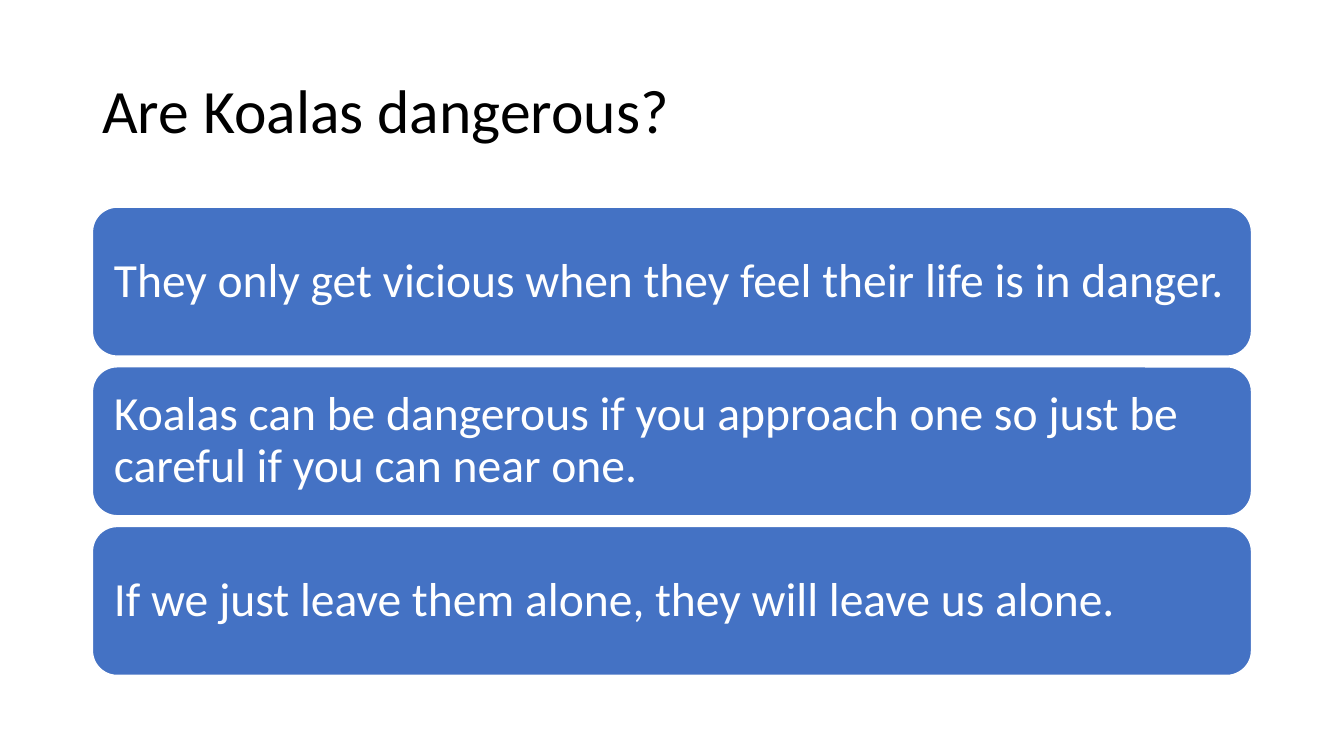
from dataclasses import dataclass

from pptx import Presentation
from pptx.dml.color import RGBColor
from pptx.enum.shapes import MSO_SHAPE
from pptx.enum.text import MSO_ANCHOR, PP_ALIGN
from pptx.util import Cm, Pt


@dataclass(frozen=True)
class Theme:
    font: str = "Calibri"
    title_size: int = 44
    card_size: int = 34
    title_color: RGBColor = RGBColor(0x00, 0x00, 0x00)
    card_fill: RGBColor = RGBColor(0x44, 0x72, 0xC4)
    card_text: RGBColor = RGBColor(0xFF, 0xFF, 0xFF)
    card_line: RGBColor = RGBColor(0xFF, 0xFF, 0xFF)


@dataclass(frozen=True)
class Box:
    """A region of the slide, in centimetres."""
    left: float
    top: float
    width: float
    height: float

    def lengths(self):
        return Cm(self.left), Cm(self.top), Cm(self.width), Cm(self.height)


THEME = Theme()
TITLE_BOX = Box(2.33, 1.01, 29.21, 3.68)
CARDS_BOX = Box(2.33, 5.22, 29.21, 11.8)
CARD_GAP = 0.27
CARD_INSET = 0.36

TITLE = "Are Koalas dangerous?"
ANSWERS = [
    "They only get vicious when they feel their life is in danger.",
    "Koalas can be dangerous if you approach one so just be careful if you can near one.",
    "If we just leave them alone, they will leave us alone.",
]


def write_text(shape, text, size, color):
    """Fill the shape with one left-aligned, vertically centred paragraph."""
    frame = shape.text_frame
    frame.word_wrap = True
    frame.vertical_anchor = MSO_ANCHOR.MIDDLE
    paragraph = frame.paragraphs[0]
    paragraph.text = text
    paragraph.alignment = PP_ALIGN.LEFT
    paragraph.line_spacing = 0.9
    paragraph.font.name = THEME.font
    paragraph.font.size = Pt(size)
    paragraph.font.color.rgb = color


def add_title(slide, box, text):
    shape = slide.shapes.add_textbox(*box.lengths())
    write_text(shape, text, THEME.title_size, THEME.title_color)


def add_card(slide, box, text):
    shape = slide.shapes.add_shape(MSO_SHAPE.ROUNDED_RECTANGLE, *box.lengths())
    shape.shadow.inherit = False
    shape.fill.solid()
    shape.fill.fore_color.rgb = THEME.card_fill
    shape.line.color.rgb = THEME.card_line
    shape.line.width = Pt(1)
    frame = shape.text_frame
    frame.margin_left = frame.margin_right = Cm(CARD_INSET)
    frame.margin_top = frame.margin_bottom = Cm(CARD_INSET)
    write_text(shape, text, THEME.card_size, THEME.card_text)


def add_card_stack(slide, box, texts):
    """Share the box's height equally among the cards."""
    height = (box.height - CARD_GAP * (len(texts) - 1)) / len(texts)
    for index, text in enumerate(texts):
        top = box.top + index * (height + CARD_GAP)
        add_card(slide, Box(box.left, top, box.width, height), text)


def main():
    presentation = Presentation()
    presentation.slide_width = Cm(33.87)
    presentation.slide_height = Cm(19.05)
    slide = presentation.slides.add_slide(presentation.slide_layouts[6])
    add_title(slide, TITLE_BOX, TITLE)
    add_card_stack(slide, CARDS_BOX, ANSWERS)
    presentation.save("out.pptx")


if __name__ == "__main__":
    main()
